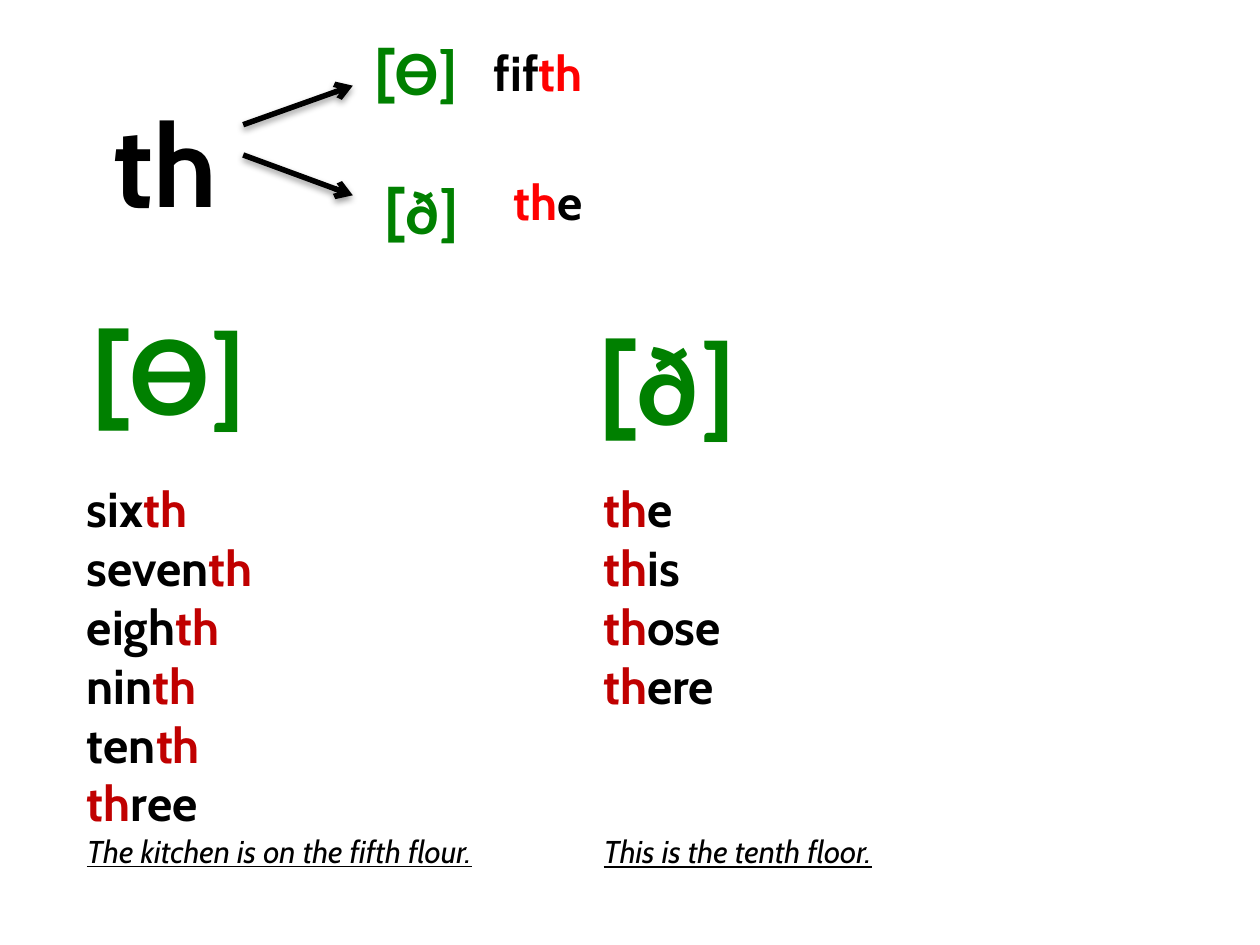
from dataclasses import dataclass

from lxml.etree import SubElement
from pptx import Presentation
from pptx.dml.color import RGBColor
from pptx.enum.shapes import MSO_CONNECTOR
from pptx.enum.text import MSO_ANCHOR, MSO_AUTO_SIZE, PP_ALIGN
from pptx.oxml.ns import qn
from pptx.util import Inches, Pt


@dataclass(frozen=True)
class Theme:
    ink: str = "000000"
    sound: str = "008000"
    example_accent: str = "FF0000"
    list_accent: str = "C00000"
    face: str = "Cabin"
    symbol_face: str = "Calibri"
    huge: int = 66
    large: int = 36
    word: int = 28
    sentence: int = 18
    word_line: float = 33.7
    arrow_line: float = 3.15


THEME = Theme()
LIST_ROWS = 6


def set_format(target, values):
    for name, value in values.items():
        setattr(target, name, value)


def place(shape, box, wrap=False):
    """Move a shape to its box (inches) and set up its text frame."""
    set_format(shape, dict(zip(("left", "top", "width", "height"), map(Inches, box))))
    set_format(shape.text_frame, {
        "word_wrap": wrap,
        "auto_size": MSO_AUTO_SIZE.SHAPE_TO_FIT_TEXT,
        "vertical_anchor": MSO_ANCHOR.TOP,
    })
    return shape.text_frame


def add_label(page, box):
    return place(page.shapes.add_textbox(0, 0, 0, 0), box).paragraphs[0]


def add_span(para, text, size, color=THEME.ink, face=THEME.face, **style):
    span = para.add_run()
    span.text = text
    set_format(span.font, {"size": Pt(size), "name": face, "bold": True, **style})
    span.font.color.rgb = RGBColor.from_string(color)


def add_word(para, word, accent):
    """Write a word with its 'th' in the accent colour."""
    before, sound, after = word.partition("th")
    for text, color in ((before, THEME.ink), (sound, accent), (after, THEME.ink)):
        if text:
            add_span(para, text, THEME.word, color)


def add_sound(page, box, symbol, size, align):
    para = add_label(page, box)
    para.alignment = align
    add_span(para, "[", size, THEME.sound)
    add_span(para, f"{symbol}]", size, THEME.sound, THEME.symbol_face)


def add_arrow(page, start, end):
    arrow = page.shapes.add_connector(
        MSO_CONNECTOR.STRAIGHT, *map(Inches, start + end))
    arrow.line.color.rgb = RGBColor.from_string(THEME.ink)
    arrow.line.width = Pt(THEME.arrow_line)
    SubElement(arrow.line._get_or_add_ln(), qn("a:tailEnd"), type="arrow")
    # Soft shadow straight below the line
    effects = SubElement(arrow._element.spPr, qn("a:effectLst"))
    shadow = SubElement(effects, qn("a:outerShdw"), blurRad=str(Pt(4)),
                        dist=str(Pt(2)), dir="5400000", rotWithShape="0")
    color = SubElement(shadow, qn("a:srgbClr"), val=THEME.ink)
    SubElement(color, qn("a:alpha"), val="38000")


def add_spelling(page, box):
    """The letter pair, as the page title."""
    para = place(page.shapes.title, box).paragraphs[0]
    para.alignment = PP_ALIGN.CENTER
    add_span(para, "th", THEME.huge)


def add_branch(page, arrow, sound_box, symbol, word_box, word):
    """An arrow to one sound and its example word."""
    add_arrow(page, *arrow)
    add_sound(page, sound_box, symbol, THEME.large, PP_ALIGN.LEFT)
    add_word(add_label(page, word_box), word, THEME.example_accent)


def add_plain_para(frame, first):
    para = frame.paragraphs[0] if first else frame.add_paragraph()
    properties = para._p.get_or_add_pPr()
    set_format(para, {"alignment": PP_ALIGN.LEFT, "space_before": Pt(0)})
    for name in ("marL", "indent"):
        properties.set(name, "0")
    SubElement(properties, qn("a:buNone"))
    return para


def add_column(page, holder, sound_box, symbol, list_box, words, sentence):
    """A large sound symbol over its word list and closing sentence."""
    add_sound(page, sound_box, symbol, THEME.huge, PP_ALIGN.CENTER)
    frame = place(holder, list_box, wrap=True)
    for row, word in enumerate(words):
        add_word(add_plain_para(frame, row == 0), word, THEME.list_accent)
    closing = add_plain_para(frame, False)
    # Sentences of both columns share one line
    closing.space_before = Pt(THEME.word_line * (LIST_ROWS - len(words)))
    add_span(closing, sentence, THEME.sentence,
             bold=False, italic=True, underline=True)


def main():
    deck = Presentation()
    set_format(deck, {"slide_width": Inches(10), "slide_height": Inches(7.5)})
    page = deck.slides.add_slide(deck.slide_layouts[3])
    left_list, right_list = page.placeholders[1], page.placeholders[2]

    # Spelling and its two sounds
    add_spelling(page, (0.75, 0.68, 1.12, 1.21))
    add_branch(page, ((1.93, 0.99), (2.8, 0.68)), (2.87, 0.21, 0.91, 1.01), "Ɵ",
               (3.82, 0.29, 1, 0.57), "fifth")
    add_branch(page, ((1.93, 1.23), (2.8, 1.55)), (2.95, 1.31, 0.84, 1.31), "ð",
               (3.98, 1.31, 0.82, 0.57), "the")

    # Word lists by sound
    add_column(page, left_list, (0.59, 2.33, 1.5, 1.21), "Ɵ",
               (0.59, 3.75, 3.94, 3.23),
               ("sixth", "seventh", "eighth", "ninth", "tenth", "three"),
               "The kitchen is on the fifth flour.")
    add_column(page, right_list, (4.61, 2.41, 1.37, 1.21), "ð",
               (4.69, 3.75, 3.83, 3.23),
               ("the", "this", "those", "there"),
               "This is the tenth floor.")

    deck.save("out.pptx")


if __name__ == "__main__":
    main()
